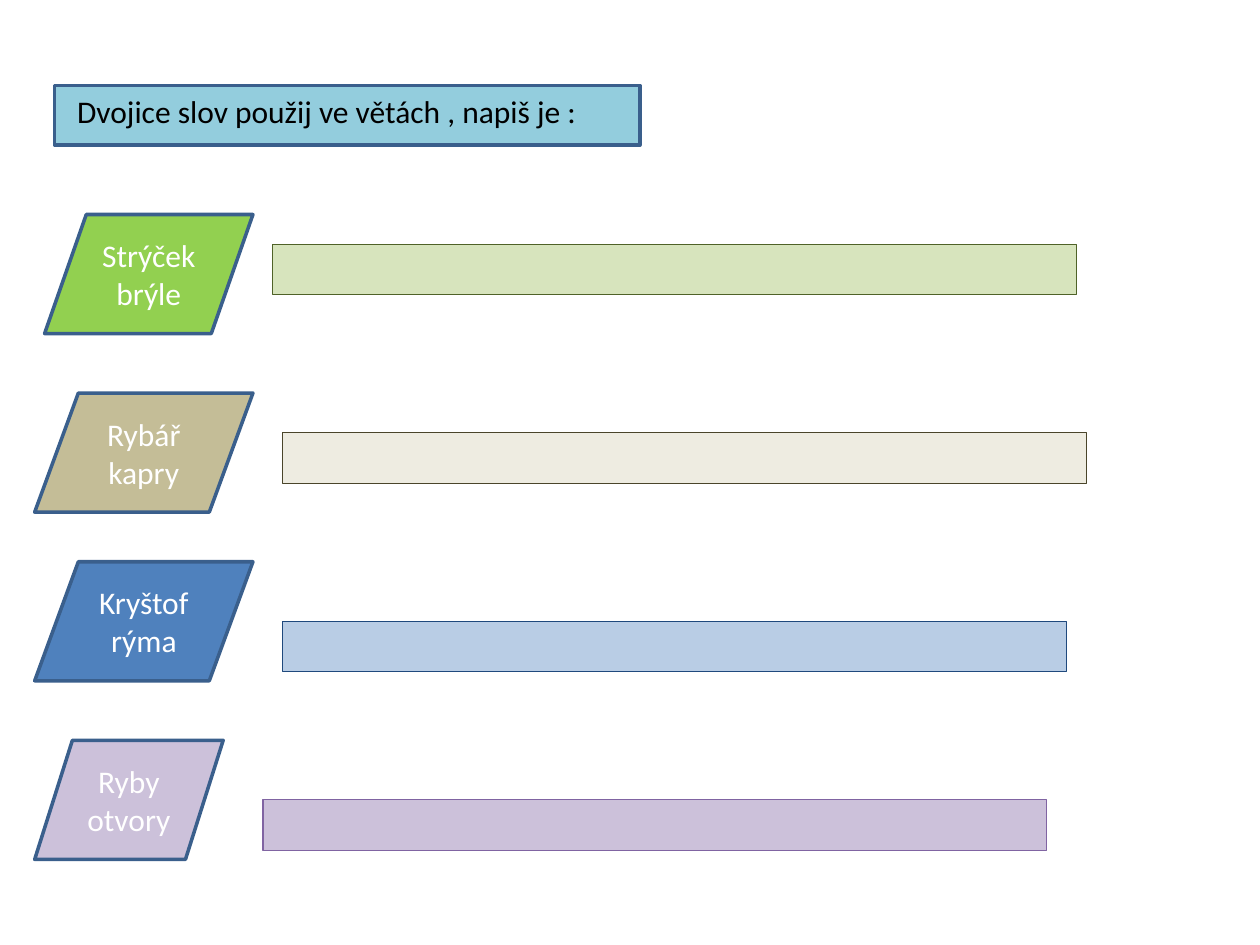
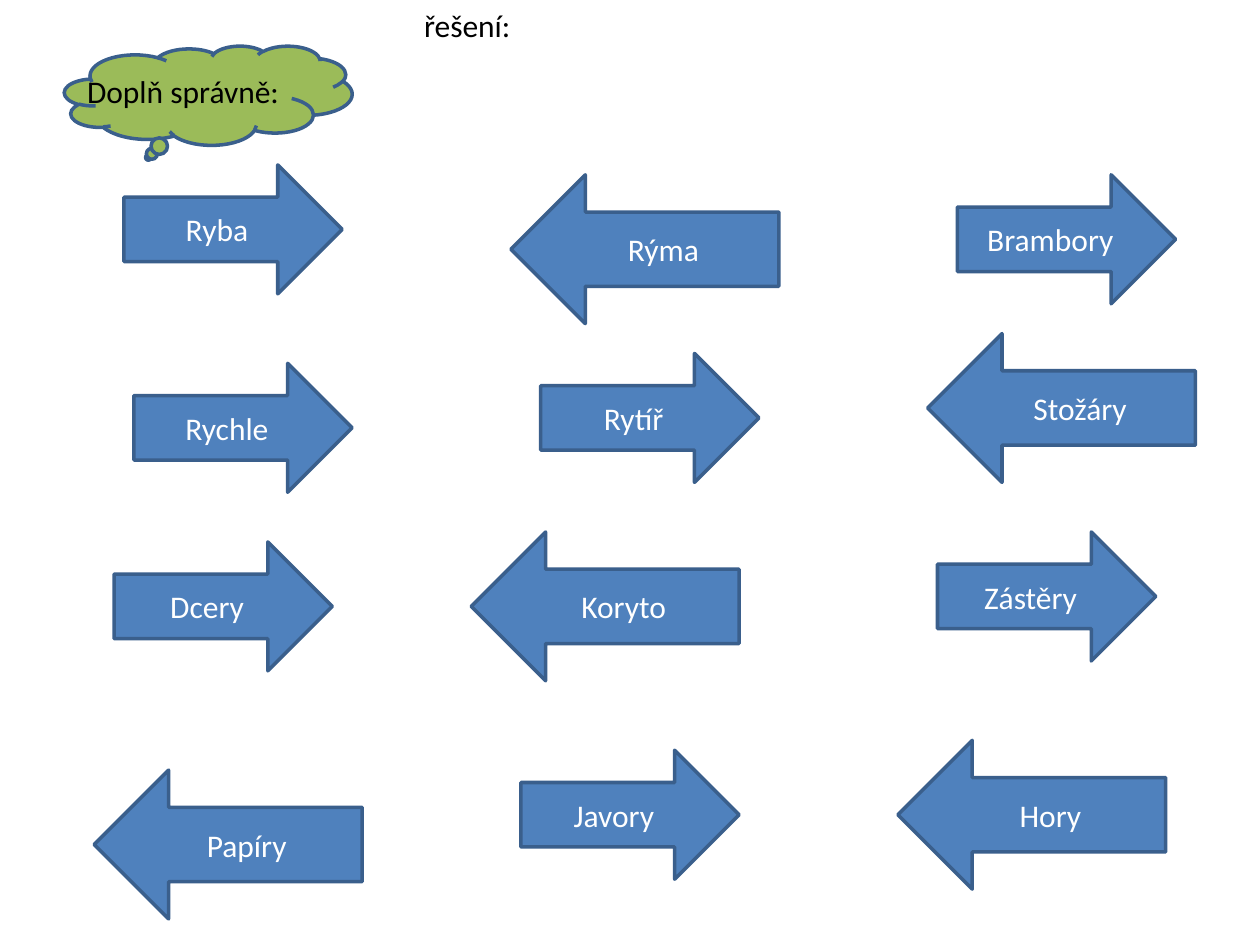
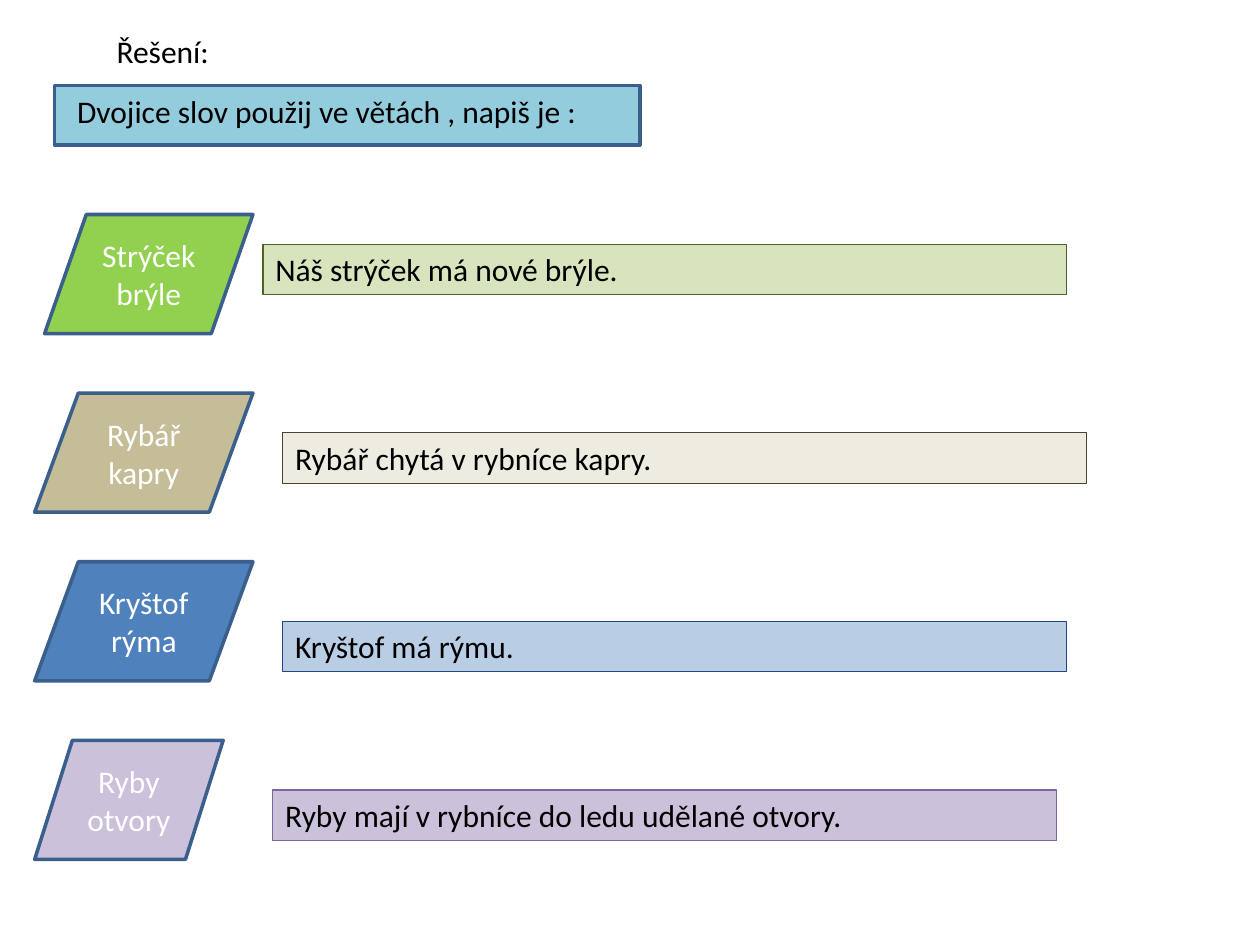
"""Build three slides of a Czech spelling exercise on a one-millimetre grid."""
from dataclasses import dataclass

from pptx import Presentation
from pptx.dml.color import RGBColor
from pptx.enum.shapes import MSO_SHAPE
from pptx.enum.text import MSO_ANCHOR, MSO_AUTO_SIZE, PP_ALIGN
from pptx.util import Inches, Mm, Pt


@dataclass(frozen=True)
class Theme:
    """Colours, type and line weights."""
    font: str = "Calibri"
    size: float = 18
    ink: str = "000000"
    pale: str = "FFFFFF"
    edge: str = "3A5F8C"
    bold: float = 2
    thin: float = 0.75
    head: str = "93CDDD"
    cloud: str = "9BBB59"
    arrow: str = "4F81BD"


LOOK = Theme()
SHIFT = 0.25
ROW = 10.2
TASK = "Dvojice slov použij ve větách , napiš je :"

PAIRS = [
    ("Strýček\nbrýle", (9, 43, 42), "92D050"),
    ("Rybář\nkapry", (7, 79, 44), "C4BD97"),
    ("Kryštof\nrýma", (7, 113, 44), "4F81BD"),
    ("Ryby\notvory", (7, 149, 38), "CCC1DA"),
]
TINTS = [("D7E4BD", "4F6228"), ("EEECE1", "4A452A"),
         ("B9CDE5", "1F497D"), ("CCC1DA", "8064A2")]
WIDTHS = [162, 162, 158, 158]
BLANKS = [("", 55, 49), ("", 57, 87), ("", 57, 125), ("", 53, 161)]
ANSWERS = [
    ("Náš strýček má nové brýle.", 53, 49),
    ("Rybář chytá v rybníce kapry.", 57, 87),
    ("Kryštof má rýmu.", 57, 125),
    ("Ryby mají v rybníce do ledu udělané otvory.", 55, 159),
]
RIGHT = [
    ("Ryba", 25, 33), ("Rychle", 27, 73), ("Zástěry", 189, 107),
    ("Javory", 105, 151), ("Dcery", 23, 109), ("Rytíř", 109, 71),
    ("Brambory", 193, 35),
]
LEFT = [
    ("Koryto", 95, 107), ("Papíry", 19, 155), ("Hory", 181, 149),
    ("Stožáry", 187, 67), ("Rýma", 103, 35),
]


def place(left, top, width, height):
    """Turn grid columns and rows into slide lengths."""
    return Mm(left), Mm(top + SHIFT), Mm(width), Mm(height)


def paint(shape, fill, edge=LOOK.edge, weight=LOOK.bold):
    """Fill and outline a shape."""
    shape.fill.solid()
    shape.fill.fore_color.rgb = RGBColor.from_string(fill)
    shape.line.color.rgb = RGBColor.from_string(edge)
    shape.line.width = Pt(weight)


def write(shape, text, color=LOOK.ink, align=PP_ALIGN.LEFT, anchor=MSO_ANCHOR.TOP):
    """Set the text of a shape in the theme's type."""
    frame = shape.text_frame
    frame.text = text
    frame.word_wrap = True
    frame.auto_size = MSO_AUTO_SIZE.NONE
    frame.vertical_anchor = anchor
    for para in frame.paragraphs:
        para.alignment = align
        para.font.name = LOOK.font
        para.font.size = Pt(LOOK.size)
        para.font.color.rgb = RGBColor.from_string(color)


def block(slide, kind, box, fill, edge=LOOK.edge, weight=LOOK.bold):
    """Add a painted preset shape without a shadow."""
    shape = slide.shapes.add_shape(kind, *place(*box))
    shape.shadow.inherit = False
    paint(shape, fill, edge, weight)
    return shape


def label(slide, kind, text, box, fill):
    """Add a shape with pale centred text."""
    shape = block(slide, kind, box, fill)
    write(shape, text, LOOK.pale, PP_ALIGN.CENTER, MSO_ANCHOR.MIDDLE)


def note(slide, text, box):
    """Add a plain line of text."""
    write(slide.shapes.add_textbox(*place(*box)), text)


def title(slide, text, box):
    """Move and format the title placeholder."""
    shape = slide.shapes.title
    shape.left, shape.top, shape.width, shape.height = place(*box)
    write(shape, text)
    return shape


def pairs(deck, lines):
    """Add a slide of word pairs, each with a bar for its sentence."""
    slide = deck.slides.add_slide(deck.slide_layouts[5])
    head = title(slide, TASK, (11, 17, 118, 12))
    head.text_frame.margin_left = Mm(4.54)
    paint(head, LOOK.head)
    for text, (left, top, width), fill in PAIRS:
        label(slide, MSO_SHAPE.FLOWCHART_DATA, text, (left, top, width, 24), fill)
    for (text, left, top), width, (fill, edge) in zip(lines, WIDTHS, TINTS):
        bar = block(slide, MSO_SHAPE.RECTANGLE, (left, top, width, ROW),
                    fill, edge, LOOK.thin)
        if text:
            write(bar, text)
    return slide


def arrows(deck):
    """Add the slide of solved words in arrows."""
    slide = deck.slides.add_slide(deck.slide_layouts[5])
    block(slide, MSO_SHAPE.CLOUD_CALLOUT, (13, 9, 58, 20), LOOK.cloud)
    for kind, words, size in ((MSO_SHAPE.RIGHT_ARROW, RIGHT, (44, 26)),
                              (MSO_SHAPE.LEFT_ARROW, LEFT, (54, 30))):
        for text, left, top in words:
            label(slide, kind, text, (left, top, *size), LOOK.arrow)
    head = title(slide, "Doplň správně:", (15, 13, 76, ROW))
    head._element.getparent().append(head._element)
    note(slide, "řešení:", (83, -SHIFT, 66, ROW))


def main():
    """Build and save the deck."""
    deck = Presentation()
    deck.slide_width, deck.slide_height = Inches(10), Inches(7.5)
    pairs(deck, BLANKS)
    arrows(deck)
    note(pairs(deck, ANSWERS), "Řešení:", (21, 5, 60, ROW))
    deck.save("out.pptx")


if __name__ == "__main__":
    main()
